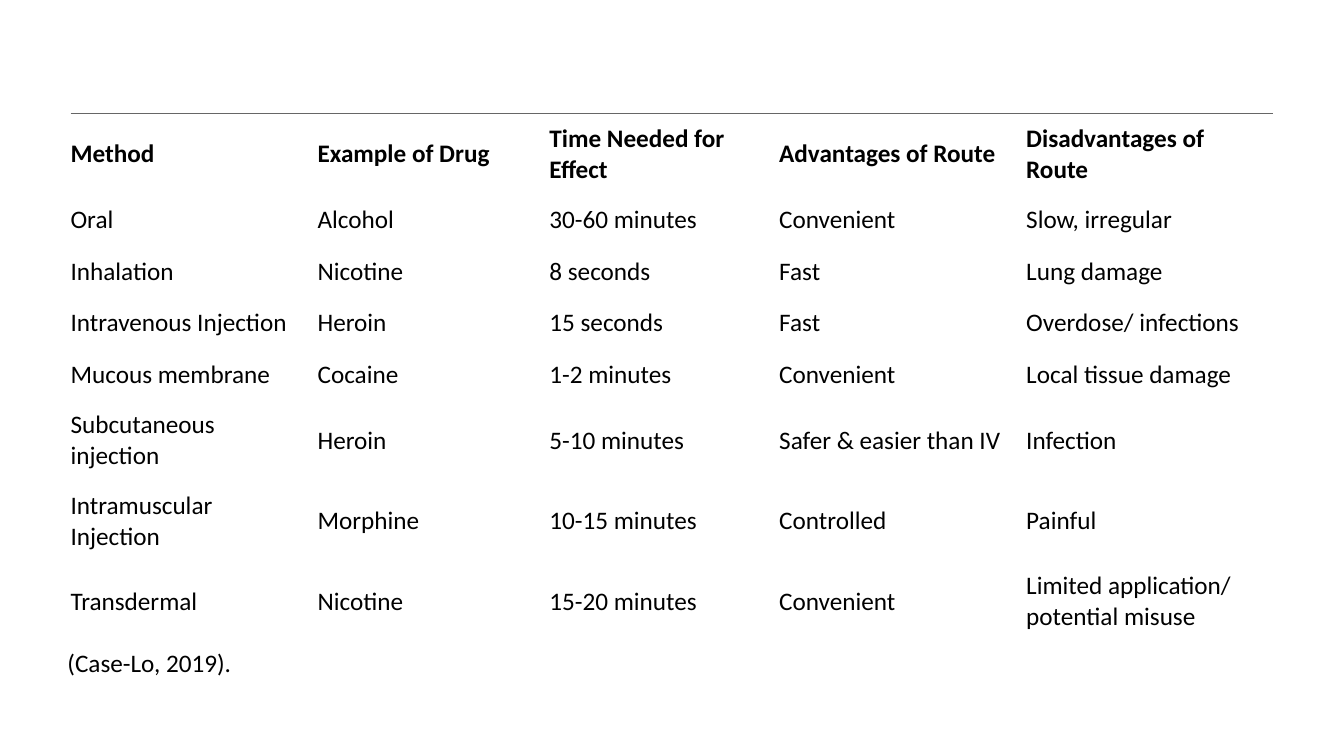
from dataclasses import dataclass

from lxml.etree import SubElement
from pptx import Presentation
from pptx.dml.color import RGBColor
from pptx.enum.text import MSO_ANCHOR, MSO_AUTO_SIZE
from pptx.oxml import parse_xml
from pptx.oxml.ns import nsdecls, qn
from pptx.slide import Slide
from pptx.table import Table, _Cell
from pptx.text.text import TextFrame
from pptx.util import Inches, Length, Pt

SLIDE_WIDTH = Inches(13.33)
SLIDE_HEIGHT = Inches(7.5)


@dataclass(frozen=True)
class Theme:
    font: str = "Calibri"
    size: Length = Pt(18)
    text: RGBColor = RGBColor(0, 0, 0)
    rule: str = "666666"
    rule_width: Length = Pt(0.75)
    table_style: str = "{2D5ABB26-0587-4C30-8999-92F81FD0307C}"


@dataclass(frozen=True)
class Route:
    method: str
    drug: str
    time: str
    advantage: str
    disadvantage: str
    height: float
    heading: bool = False

    def texts(self) -> tuple[str, ...]:
        return self.method, self.drug, self.time, self.advantage, self.disadvantage


THEME = Theme()
SINGLE_LINE = 6.8
DOUBLE_LINE = 10.67
COLUMN_WIDTHS = (18.38, 17.25, 17.1, 18.38, 18.38)
ROUTES = (
    Route("Method", "Example of Drug", "Time Needed for Effect",
          "Advantages of Route", "Disadvantages of Route", DOUBLE_LINE, True),
    Route("Oral", "Alcohol", "30-60 minutes", "Convenient", "Slow, irregular", SINGLE_LINE),
    Route("Inhalation", "Nicotine", "8 seconds", "Fast", "Lung damage", SINGLE_LINE),
    Route("Intravenous Injection", "Heroin", "15 seconds", "Fast",
          "Overdose/ infections", SINGLE_LINE),
    Route("Mucous membrane", "Cocaine", "1-2 minutes", "Convenient",
          "Local tissue damage", SINGLE_LINE),
    Route("Subcutaneous injection", "Heroin", "5-10 minutes",
          "Safer & easier than IV", "Infection", DOUBLE_LINE),
    Route("Intramuscular Injection", "Morphine", "10-15 minutes", "Controlled",
          "Painful", DOUBLE_LINE),
    Route("Transdermal", "Nicotine", "15-20 minutes", "Convenient",
          "Limited application/ potential misuse", DOUBLE_LINE),
)


def across(percent: float) -> Length:
    return Length(round(SLIDE_WIDTH * percent / 100))


def down(percent: float) -> Length:
    return Length(round(SLIDE_HEIGHT * percent / 100))


def write(text_frame: TextFrame, text: str, bold: bool = False) -> None:
    text_frame.text = text
    for run in text_frame.paragraphs[0].runs:
        run.font.name = THEME.font
        run.font.size = THEME.size
        run.font.bold = bold
        run.font.color.rgb = THEME.text


def add_top_rule(cell: _Cell) -> None:
    border = parse_xml(f'<a:lnT {nsdecls("a")} w="{THEME.rule_width}"/>')
    fill = SubElement(border, qn("a:solidFill"))
    SubElement(fill, qn("a:srgbClr"), val=THEME.rule)
    cell._tc.get_or_add_tcPr().insert(0, border)


def fill_cell(cell: _Cell, text: str, heading: bool) -> None:
    cell.fill.background()
    cell.vertical_anchor = MSO_ANCHOR.MIDDLE
    cell.margin_left = 0
    cell.margin_right = across(1.13)
    cell.margin_top = cell.margin_bottom = down(0.93)
    write(cell.text_frame, text, heading)
    if heading:
        add_top_rule(cell)


def add_route_table(slide: Slide) -> Table:
    frame = slide.shapes.add_table(
        len(ROUTES), len(COLUMN_WIDTHS), across(5.25), down(15.07),
        across(sum(COLUMN_WIDTHS)), down(sum(route.height for route in ROUTES)))
    table = frame.table
    table.first_row = table.horz_banding = False
    table._tbl.tblPr.find(qn("a:tableStyleId")).text = THEME.table_style
    for column, width in zip(table.columns, COLUMN_WIDTHS):
        column.width = across(width)
    for row, route in zip(table.rows, ROUTES):
        row.height = down(route.height)
        for cell, text in zip(row.cells, route.texts()):
            fill_cell(cell, text, route.heading)
    return table


def add_citation(slide: Slide, text: str) -> None:
    citation = slide.shapes.add_textbox(across(4.28), down(84.93), across(50.04), down(5.33))
    citation.text_frame.word_wrap = True
    citation.text_frame.auto_size = MSO_AUTO_SIZE.SHAPE_TO_FIT_TEXT
    write(citation.text_frame, text)


def main() -> None:
    presentation = Presentation()
    presentation.slide_width = SLIDE_WIDTH
    presentation.slide_height = SLIDE_HEIGHT
    slide = presentation.slides.add_slide(presentation.slide_layouts[6])
    add_route_table(slide)
    add_citation(slide, "(Case-Lo, 2019).")
    presentation.save("out.pptx")


if __name__ == "__main__":
    main()
